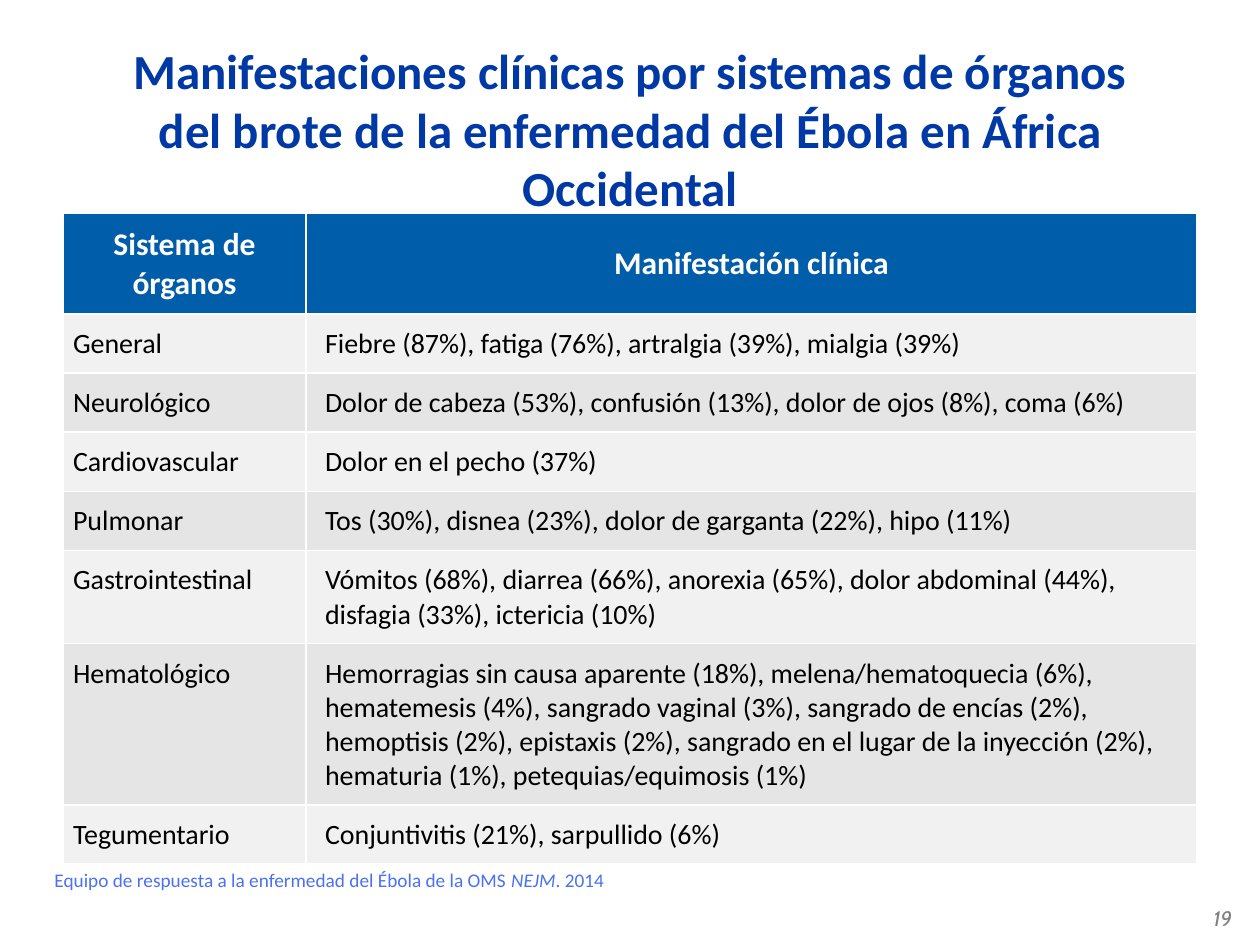
import pptx
import pptx.util
import pptx.dml.color
import pptx.enum.text
import pptx.oxml
import pptx.oxml.ns
from lxml import etree

WIDE, HIGH = 10, 7.5
INK = {"title": "0039A6", "head": "005DAA", "white": "FFFFFF", "text": "000000",
       "odd": "E5E5E5", "even": "CCCCCC", "source": "4971F2", "page": "7F7F7F"}
ALIGN = pptx.enum.text.PP_ALIGN
MID = pptx.enum.text.MSO_ANCHOR.MIDDLE
HEAD = ("Sistema de órganos", "Manifestación clínica")
# Organ system, findings, lines of text
ROWS = [
    ("General", "Fiebre (87%), fatiga (76%), artralgia (39%), mialgia (39%)", 1),
    ("Neurológico", "Dolor de cabeza (53%), confusión (13%), dolor de ojos (8%), coma (6%)", 1),
    ("Cardiovascular", "Dolor en el pecho (37%)", 1),
    ("Pulmonar", "Tos (30%), disnea (23%), dolor de garganta (22%), hipo (11%)", 1),
    ("Gastrointestinal", "Vómitos (68%), diarrea (66%), anorexia (65%), dolor abdominal (44%), "
     "disfagia (33%), ictericia (10%)", 2),
    ("Hematológico", "Hemorragias sin causa aparente (18%), melena/hematoquecia (6%), "
     "hematemesis (4%), sangrado vaginal (3%), sangrado de encías (2%), "
     "hemoptisis (2%), epistaxis (2%), sangrado en el lugar de la inyección (2%), "
     "hematuria (1%), petequias/equimosis (1%)", 4),
    ("Tegumentario", "Conjuntivitis (21%), sarpullido (6%)", 1),
]


def inch(size):
    return pptx.util.Inches(size)


def color(name):
    return pptx.dml.color.RGBColor.from_string(INK[name])


def style(font, size, ink, bold=False, face="Calibri"):
    font.name, font.size, font.bold = face, pptx.util.Pt(size), bold
    font.color.rgb = color(ink)


def add_box(slide, box):
    frame = slide.shapes.add_textbox(*map(inch, box)).text_frame
    frame.word_wrap = True
    return frame


def add_title(slide, box):
    frame = add_box(slide, box)
    frame.vertical_anchor = MID
    line = frame.paragraphs[0]
    line.text = ("Manifestaciones clínicas por sistemas de órganos\v"
                 "del brote de la enfermedad del Ébola en África Occidental")
    line.alignment = ALIGN.CENTER
    for run in line.runs:
        style(run.font, 28, "title", True)


def edge(cell):
    """Draw thin white lines on all four sides."""
    props = cell._tc.get_or_add_tcPr()
    for spot, side in enumerate("LRTB"):
        props.insert(spot, pptx.oxml.parse_xml(
            f'<a:ln{side} {pptx.oxml.ns.nsdecls("a")} w="12700"><a:solidFill>'
            f'<a:srgbClr val="{INK["white"]}"/></a:solidFill></a:ln{side}>'))


def fill(cell, ink, alpha=None):
    cell.fill.solid()
    cell.fill.fore_color.rgb = color(ink)
    if alpha:
        tone = next(cell._tc.tcPr.iter(pptx.oxml.ns.qn("a:srgbClr")))
        etree.SubElement(tone, pptx.oxml.ns.qn("a:alpha"), val=str(alpha * 1000))
    edge(cell)


def put(cell, text, pads, size, ink, bold=False):
    cell.margin_left, cell.margin_right = map(inch, pads)
    cell.margin_top = cell.margin_bottom = inch(0.1)
    cell.text_frame.text = text
    style(cell.text_frame.paragraphs[0].runs[0].font, size, ink, bold)


def add_grid(slide, box):
    grid = slide.shapes.add_table(len(ROWS) + 1, 2, *map(inch, box)).table
    first = 1.93
    for col, width in zip(grid.columns, (first, box[2] - first)):
        col.width = inch(width)
    grid.rows[0].height = inch(0.8)
    for num, text in enumerate(HEAD):
        cell = grid.cell(0, num)
        put(cell, text, (0.06, 0.06), 18, "white", True)
        cell.text_frame.paragraphs[0].alignment = ALIGN.CENTER
        fill(cell, "head")
    grid.cell(0, 1).vertical_anchor = MID
    for row, (*texts, lines) in enumerate(ROWS, 1):
        grid.rows[row].height = inch(0.2 + 0.27 * lines)
        for num, (text, pads) in enumerate(zip(texts, ((0.08, 0), (0.15, 0.06)))):
            cell = grid.cell(row, num)
            put(cell, text, pads, 16, "text")
            fill(cell, "odd" if row % 2 else "even", 50)


def add_source(slide, box):
    line = add_box(slide, box).paragraphs[0]
    for text in ("Equipo de respuesta a la enfermedad del Ébola de la OMS ", "NEJM", ". 2014"):
        run = line.add_run()
        run.text = text
        style(run.font, 11, "source")
        run.font.italic = text == "NEJM"


def add_page(slide, box):
    frame = add_box(slide, box)
    frame.margin_left = frame.margin_right = inch(0.05)
    frame.text = "19"
    font = frame.paragraphs[0].runs[0].font
    style(font, 12, "page", face="Cabin")
    font.italic = True


def main():
    deck = pptx.Presentation()
    deck.slide_width, deck.slide_height = inch(WIDE), inch(HIGH)
    slide = deck.slides.add_slide(deck.slide_layouts[6])
    side = WIDE / 30
    add_title(slide, (side, 0.73, WIDE - 2 * side, 0.58))
    add_grid(slide, (WIDE / 20, 1.69, WIDE * 0.9, 5.13))
    add_source(slide, (side, 6.84, WIDE - 2 * side, 0.58))
    add_page(slide, (9.58, 7.14, 0.4, 0.3))
    deck.save("out.pptx")


if __name__ == "__main__":
    main()
